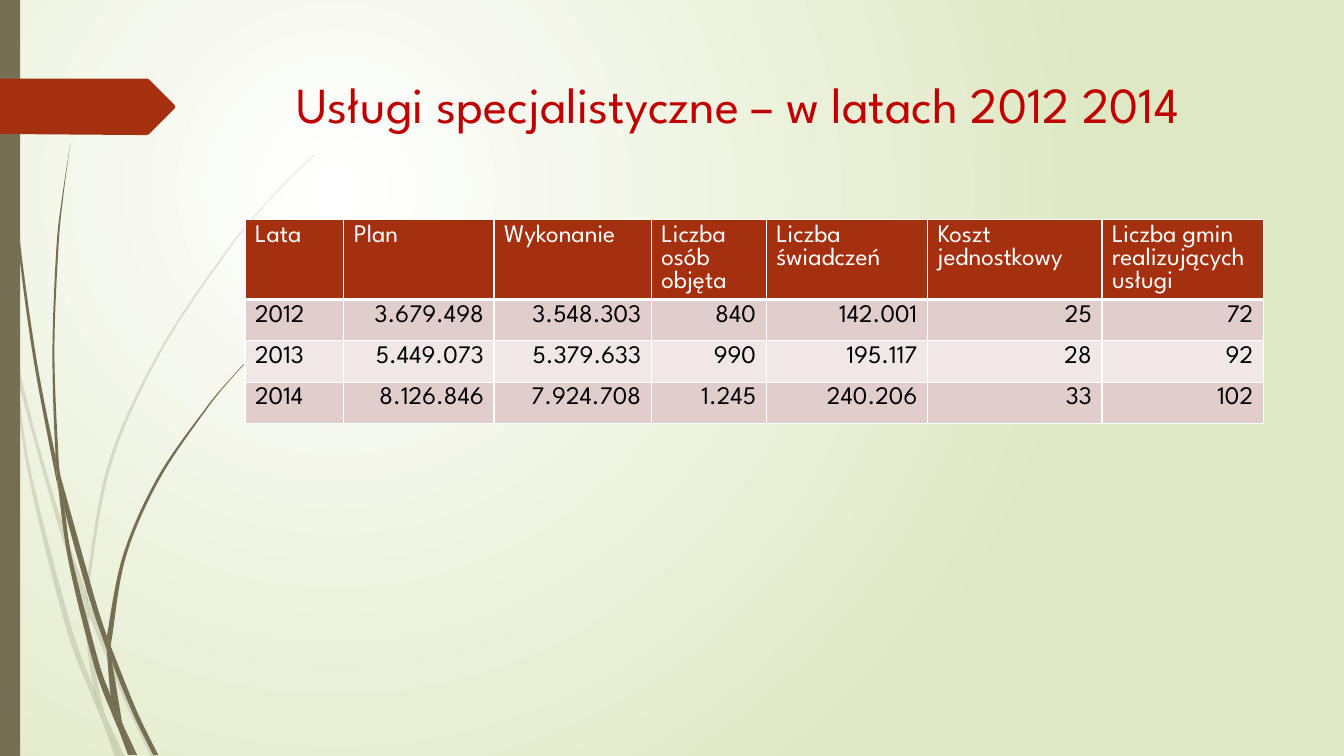
from dataclasses import dataclass

from lxml import etree
from pptx import Presentation
from pptx import util as u
from pptx.dml.color import RGBColor
from pptx.enum import shapes, text
from pptx.oxml.ns import qn


@dataclass(frozen=True)
class Theme:
    font: str = "League Spartan"
    title_size: int = 36
    table_size: int = 18
    title: str = "C00000"
    accent: str = "A53010"
    stem: str = "766F54"
    white: str = "FFFFFF"
    black: str = "000000"
    glow_edge: str = "DFE8C4"
    bands: tuple = ("E1CDCC", "F0E8E7")


# Each leaf of grass has two curved edges, which together run around it
PALE_LEAVES = [
    ([(0.11, 3.5), (0.09, 3.22), (0, 2.82)], [(0, 2.99), (0.1, 3.44)]),
    ([(0.17, 3.76), (0.58, 5.22), (0.84, 5.99)],
     [(0.85, 5.86), (0.62, 5.2), (0.36, 4.33), (0.14, 3.45)]),
    ([(0.88, 6.1), (1.23, 6.94), (1.5, 7.51)],
     [(1.55, 7.51), (1.27, 6.92), (0.92, 6.07), (0.88, 5.96)]),
    ([(1.05, 7.11), (1.19, 7.51)], [(1.24, 7.51), (1.05, 7.11)]),
    ([(0.11, 3.5), (0.28, 4.7), (0.65, 6.21), (0.92, 6.93), (1.01, 7.14)],
     [(0.99, 7.07), (0.93, 6.83), (0.7, 6.19), (0.31, 4.69), (0.17, 3.76), (0.11, 3.5)]),
    ([(0.84, 5.99), (0.87, 6.46), (0.93, 6.83), (0.96, 6.92), (1.05, 7.11)],
     [(1.03, 7.06), (0.91, 6.46), (0.88, 6.1), (0.88, 6.08)]),
    ([(0.88, 5.96), (0.88, 5.84), (1.1, 4.62), (1.6, 3.49), (2.29, 2.45), (2.68, 1.98),
      (2.9, 1.75), (3.12, 1.54)],
     [(3.12, 1.53), (2.89, 1.75), (2.68, 1.97), (2.28, 2.44), (1.58, 3.48), (1.07, 4.61),
      (0.85, 5.84), (0.85, 5.86)]),
    ([(1.01, 7.14), (1.14, 7.51)], [(1.19, 7.51), (1.01, 7.14)]),
    ([(0.84, 5.99), (0.88, 6.08), (0.88, 6.1)], [(0.88, 5.96), (0.85, 5.86)]),
    ([(0.93, 6.83), (0.99, 7.07), (1.01, 7.14), (1.19, 7.51)],
     [(1.19, 7.51), (1.05, 7.11), (0.96, 6.92)]),
]
DARK_LEAVES = [
    ([(0.03, 0), (0.04, 0.48), (0.07, 1.1), (0.17, 2.33), (0.33, 3.55), (0.56, 4.77),
      (0.57, 4.81)],
     [(0.55, 4.57), (0.55, 4.53), (0.36, 3.55), (0.19, 2.32), (0.08, 1.09), (0.05, 0.48),
      (0.04, 0)]),
    ([(0.6, 4.72), (0.64, 5.05), (0.88, 5.92), (1.06, 6.45)],
     [(1.06, 6.33), (1.06, 6.31), (0.93, 5.9), (0.6, 4.72)]),
    ([(1.1, 6.41), (1.11, 6.56), (1.32, 7.08), (1.52, 7.49)],
     [(1.57, 7.49), (1.36, 7.06), (1.13, 6.49), (1.1, 6.41)]),
    ([(0.57, 4.77), (0.68, 5.57), (0.93, 6.59), (1.11, 7.08), (1.17, 7.22)],
     [(1.16, 7.17), (1.1, 6.91), (0.98, 6.57), (0.72, 5.56), (0.64, 5.05), (0.57, 4.77)]),
    ([(0.6, 4.72), (0.58, 4.53), (0.54, 3.49), (0.58, 2.45), (0.63, 1.93), (0.7, 1.41)],
     [(0.7, 1.41), (0.62, 1.93), (0.56, 2.45), (0.52, 3.49), (0.55, 4.49), (0.6, 4.72)]),
    ([(1.22, 7.19), (1.33, 7.49)], [(1.36, 7.49), (1.22, 7.19)]),
    ([(0.55, 4.49), (0.55, 4.53), (0.57, 4.77), (0.64, 5.05)],
     [(0.6, 4.72), (0.55, 4.49)]),
    ([(1.1, 6.41), (1.11, 6.33), (1.25, 5.52), (1.58, 4.76), (2.05, 4.06), (2.31, 3.74),
      (2.45, 3.59), (2.61, 3.44)],
     [(2.6, 3.44), (2.45, 3.58), (2.31, 3.73), (2.04, 4.05), (1.56, 4.74), (1.22, 5.51),
      (1.06, 6.31)]),
    ([(1.17, 7.22), (1.27, 7.49)], [(1.31, 7.49), (1.17, 7.22)]),
    ([(1.06, 6.45), (1.1, 6.91), (1.16, 7.06), (1.22, 7.19)],
     [(1.21, 7.16), (1.11, 6.56), (1.09, 6.51), (1.06, 6.45)]),
    ([(1.06, 6.31), (1.06, 6.45), (1.09, 6.51), (1.11, 6.56)],
     [(1.1, 6.41), (1.06, 6.31)]),
    ([(1.1, 6.91), (1.16, 7.17), (1.17, 7.22), (1.3, 7.49)],
     [(1.33, 7.49), (1.22, 7.19), (1.16, 7.06), (1.1, 6.91)]),
]
TAB = [(0, 0.78), (1.46, 0.78), (1.48, 0.79), (1.73, 1.04), (1.74, 1.06), (1.73, 1.08),
       (1.48, 1.33), (1.46, 1.34), (1.36, 1.34), (0, 1.33)]

COLUMN_WIDTHS = [0.98, 1.49, 1.56, 1.14, 1.6, 1.73, 1.6]
SERVICES = [
    ["Lata", "Plan", "Wykonanie", "Liczba osób objęta", "Liczba świadczeń",
     "Koszt jednostkowy", "Liczba gmin realizujących usługi"],
    ["2012", "3.679.498", "3.548.303", "840", "142.001", "25", "72"],
    ["2013", "5.449.073", "5.379.633", "990", "195.117", "28", "92"],
    ["2014", "8.126.846", "7.924.708", "1.245", "240.206", "33", "102"],
]


def bend(lines, edge):
    """Turn the straight lines along an edge into one smooth curve."""
    ends = [edge[0], *edge, edge[-1]]
    for line, a, b, c, d in zip(lines, ends, ends[1:], ends[2:], ends[3:]):
        line.tag = qn("a:cubicBezTo")
        controls = ([q + (r - p) / 6 for p, q, r in zip(a, b, c)],
                    [r - (s - q) / 6 for q, r, s in zip(b, c, d)])
        for i, (x, y) in enumerate(controls):
            line.insert(i, etree.Element(qn("a:pt"), x=str(round(x)), y=str(round(y))))


class SlideBuilder:
    def __init__(self, slide, theme):
        self.slide = slide
        self.theme = theme

    def background(self):
        fill = self.slide.background.fill
        fill.gradient()
        for stop, color in zip(fill.gradient_stops, (self.theme.white, self.theme.glow_edge)):
            stop.color.rgb = RGBColor.from_string(color)
        grad = next(self.slide.element.iter(qn("a:gradFill")))
        grad.remove(grad.find(qn("a:lin")))
        circle = etree.SubElement(grad, qn("a:path"), path="circle")
        etree.SubElement(circle, qn("a:fillToRect"),
                         l="50000", t="50000", r="100000", b="100000")

    def paint(self, sp, color, alpha=None):
        sp.shadow.inherit = False
        sp.line.fill.background()
        sp.fill.solid()
        sp.fill.fore_color.rgb = RGBColor.from_string(color)
        if alpha is not None:
            rgb = next(sp.element.spPr.iter(qn("a:srgbClr")))
            etree.SubElement(rgb, qn("a:alpha"), val=str(alpha * 1000))

    def outline(self, parent, points, color, alpha=None):
        points = [(u.Inches(x), u.Inches(y)) for x, y in points]
        builder = parent.build_freeform(*points[0])
        builder.add_line_segments(points[1:], close=True)
        sp = builder.convert_to_shape()
        self.paint(sp, color, alpha)
        return sp

    def grass(self, leaves, alpha=None):
        group = self.slide.shapes.add_group_shape()
        for down, up in leaves:
            sp = self.outline(group.shapes, down + up, self.theme.stem, alpha)
            lines = list(sp.element.iter(qn("a:lnTo")))
            points = [(int(pt.get("x")), int(pt.get("y"))) for pt in sp.element.iter(qn("a:pt"))]
            n = len(down)
            bend(lines[:n - 1], points[:n])
            bend(lines[n:], points[n:n + len(up)])

    def bar(self, left, top, width, height):
        sp = self.slide.shapes.add_shape(
            shapes.MSO_SHAPE.RECTANGLE, *map(u.Inches, (left, top, width, height)))
        self.paint(sp, self.theme.stem)

    def style_text(self, tf, size, color):
        for r in tf.paragraphs[0].runs:
            r.font.name = self.theme.font
            r.font.size = u.Pt(size)
            r.font.color.rgb = RGBColor.from_string(color)

    def title(self, words, left, top, width, height):
        sp = self.slide.shapes.title
        sp.left, sp.top, sp.width, sp.height = map(u.Inches, (left, top, width, height))
        tf = sp.text_frame
        tf.text = words
        tf.word_wrap = True
        tf.vertical_anchor = text.MSO_ANCHOR.TOP
        tf.paragraphs[0].alignment = text.PP_ALIGN.LEFT
        self.style_text(tf, self.theme.title_size, self.theme.title)

    def borders(self, cell, widths):
        tc_pr = cell._tc.get_or_add_tcPr()
        for side, width in zip("LRTB", widths):
            ln = etree.SubElement(tc_pr, qn(f"a:ln{side}"), w=str(u.Pt(width)))
            fill = etree.SubElement(ln, qn("a:solidFill"))
            etree.SubElement(fill, qn("a:srgbClr"), val=self.theme.white)

    def table(self, rows, left, top, widths, height, row_height):
        frame = self.slide.shapes.add_table(
            len(rows), len(widths), *map(u.Inches, (left, top, sum(widths), height)))
        table = frame.table
        for column, width in zip(table.columns, widths):
            column.width = u.Inches(width)
        for i, row in enumerate(rows):
            table.rows[i].height = u.Inches(row_height)
            fill = self.theme.bands[(i - 1) % 2] if i else self.theme.accent
            color = self.theme.black if i else self.theme.white
            for j, value in enumerate(row):
                cell = table.cell(i, j)
                self.borders(cell, (1, 1, 3 if i == 1 else 1, 1 if i else 3))
                cell.fill.solid()
                cell.fill.fore_color.rgb = RGBColor.from_string(fill)
                cell.text_frame.text = value
                if i and j:
                    cell.text_frame.paragraphs[0].alignment = text.PP_ALIGN.RIGHT
                self.style_text(cell.text_frame, self.theme.table_size, color)
        frame.height = u.Inches(height)


def main():
    prs = Presentation()
    prs.slide_width, prs.slide_height = u.Inches(13.33), u.Inches(7.5)
    theme = Theme()
    page = SlideBuilder(prs.slides.add_slide(prs.slide_layouts[5]), theme)
    # Background, grass, side bar and arrow tab
    page.background()
    page.grass(PALE_LEAVES, alpha=20)
    page.grass(DARK_LEAVES)
    page.bar(0, 0, 0.2, 7.5)
    page.outline(page.slide.shapes, TAB, theme.accent)
    # Title and table
    page.title("Usługi specjalistyczne – w latach 2012 2014", 2.84, 0.68, 9.75, 1.4)
    page.table(SERVICES, 2.43, 2.18, COLUMN_WIDTHS, 2.52, 0.41)
    prs.save("out.pptx")


if __name__ == "__main__":
    main()
